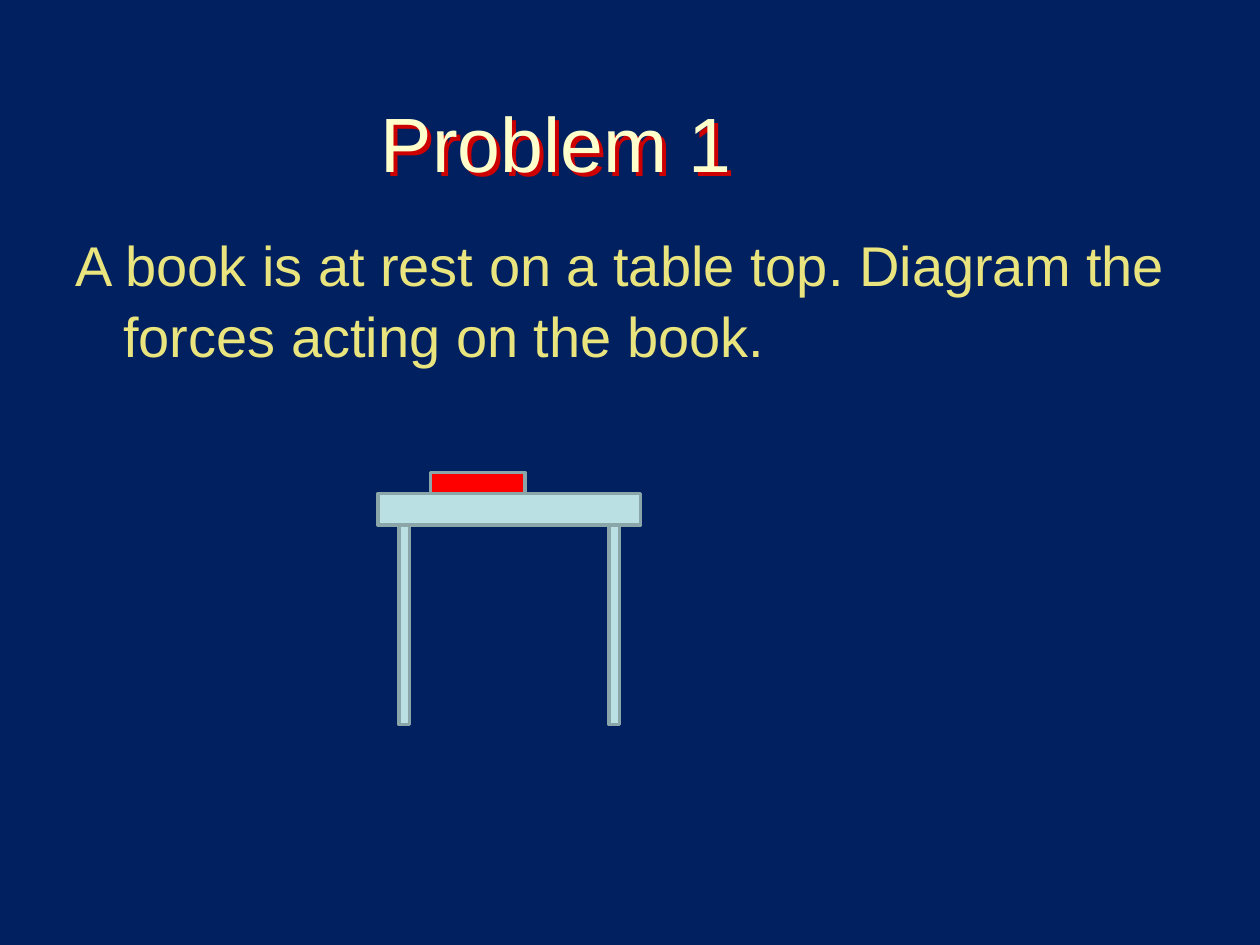
from lxml.etree import SubElement
from pptx import Presentation
from pptx.dml.color import RGBColor
from pptx.enum.shapes import MSO_SHAPE
from pptx.enum.text import MSO_ANCHOR, PP_ALIGN
from pptx.oxml.ns import qn
from pptx.util import Inches, Pt

COLORS = {
    "background": "002060",
    "title": "FFFFCC",
    "title_shadow": "CC0000",
    "body": "E9E47D",
    "table": "BBE0E3",
    "book": "FF0000",
    "outline": "8AA6A8",
}
FONT = "Arial"
CELLS_PER_INCH = 12


def color(name):
    return RGBColor.from_string(COLORS[name])


def cells(count):
    return Inches(count / CELLS_PER_INCH)


def write_text(frame, text, *, size, color_name, align=PP_ALIGN.LEFT,
               anchor=MSO_ANCHOR.TOP, hanging=0, line_spacing=1.0):
    frame.word_wrap = True
    frame.vertical_anchor = anchor
    paragraph = frame.paragraphs[0]
    paragraph.text = text
    paragraph.alignment = align
    paragraph.space_before = Pt(0)
    paragraph.line_spacing = line_spacing
    if hanging:
        properties = paragraph._p.get_or_add_pPr()
        properties.set("marL", str(Inches(hanging)))
        properties.set("indent", str(-Inches(hanging)))
    font = paragraph.runs[0].font
    font.name = FONT
    font.size = Pt(size)
    font.color.rgb = color(color_name)


class SlideBuilder:
    def __init__(self, presentation):
        self.slide = presentation.slides.add_slide(presentation.slide_layouts[5])
        fill = self.slide.background.fill
        fill.solid()
        fill.fore_color.rgb = color("background")

    def title(self, text, left, top, width, height):
        shape = self.slide.shapes.title
        shape.left, shape.top = cells(left), cells(top)
        shape.width, shape.height = cells(width), cells(height)
        write_text(shape.text_frame, text, size=44, color_name="title",
                   align=PP_ALIGN.CENTER, anchor=MSO_ANCHOR.MIDDLE)
        effects = SubElement(shape._element.spPr, qn("a:effectLst"))
        shadow = SubElement(effects, qn("a:outerShdw"), dist=str(Pt(3.2)),
                            dir="2700000", algn="ctr", rotWithShape="0")
        SubElement(shadow, qn("a:srgbClr"), val=COLORS["title_shadow"])

    def body(self, text, left, top, width, height):
        box = self.slide.shapes.add_textbox(
            cells(left), cells(top), cells(width), cells(height))
        write_text(box.text_frame, text, size=32, color_name="body",
                   hanging=0.38, line_spacing=1.06)

    def block(self, color_name, left, top, width, height):
        shape = self.slide.shapes.add_shape(
            MSO_SHAPE.RECTANGLE, cells(left), cells(top), cells(width), cells(height))
        shape.shadow.inherit = False
        shape.fill.solid()
        shape.fill.fore_color.rgb = color(color_name)
        shape.line.color.rgb = color("outline")
        shape.line.width = Pt(2)


def main():
    presentation = Presentation()
    presentation.slide_width = Inches(10)
    presentation.slide_height = Inches(7.5)

    builder = SlideBuilder(presentation)
    builder.title("Problem 1", 8, 6, 90, 15)
    builder.body("A book is at rest on a table top. Diagram the forces acting on the book.",
                 6, 21, 108, 59.4)

    top_left, top_edge, top_width, top_height = 36, 47, 25, 3
    builder.block("table", top_left, top_edge, top_width, top_height)
    for leg_offset in (2, 22):
        builder.block("table", top_left + leg_offset, top_edge + top_height, 1, 19)
    book_height = 2
    builder.block("book", top_left + 5, top_edge - book_height, 9, book_height)

    presentation.save("out.pptx")


if __name__ == "__main__":
    main()
